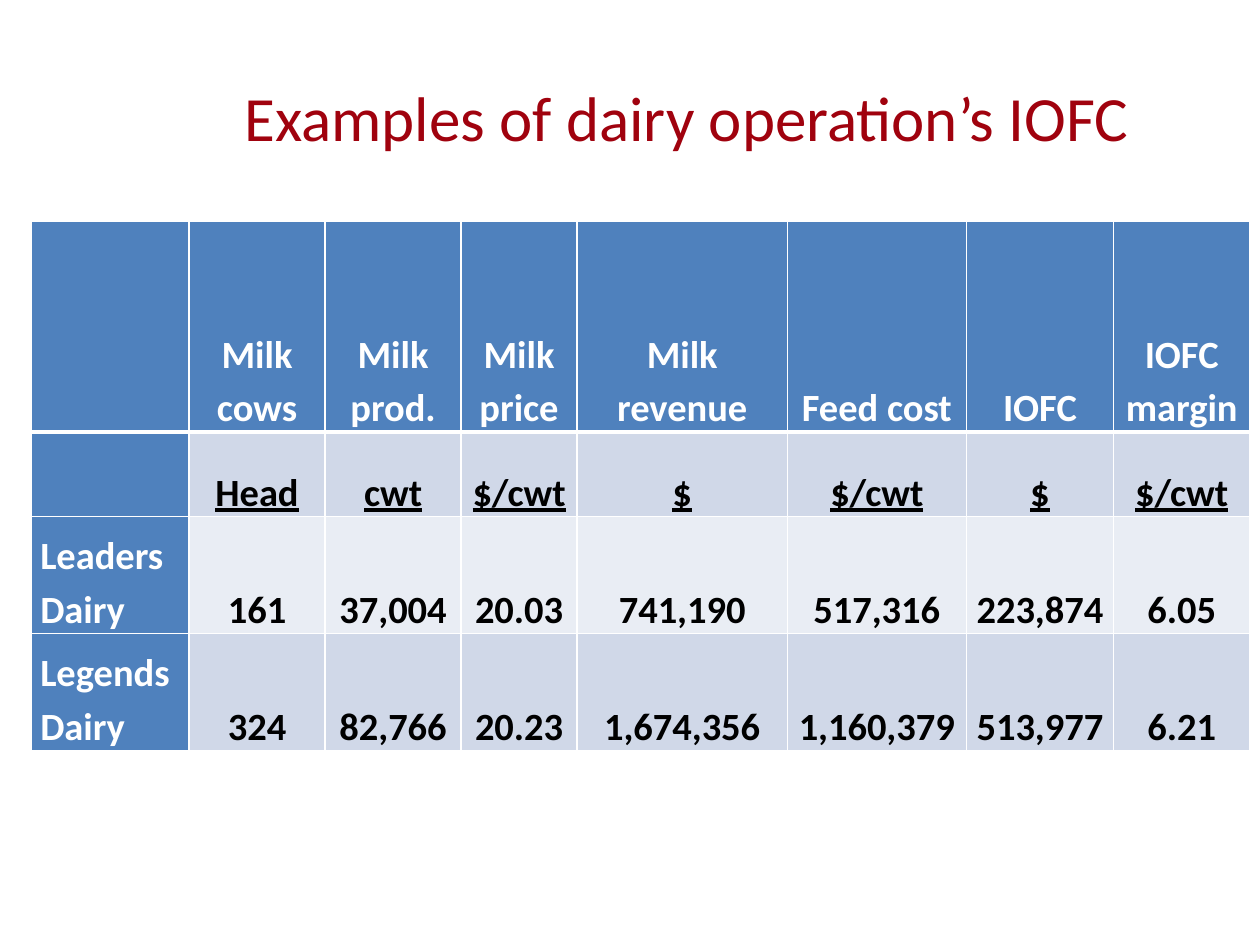
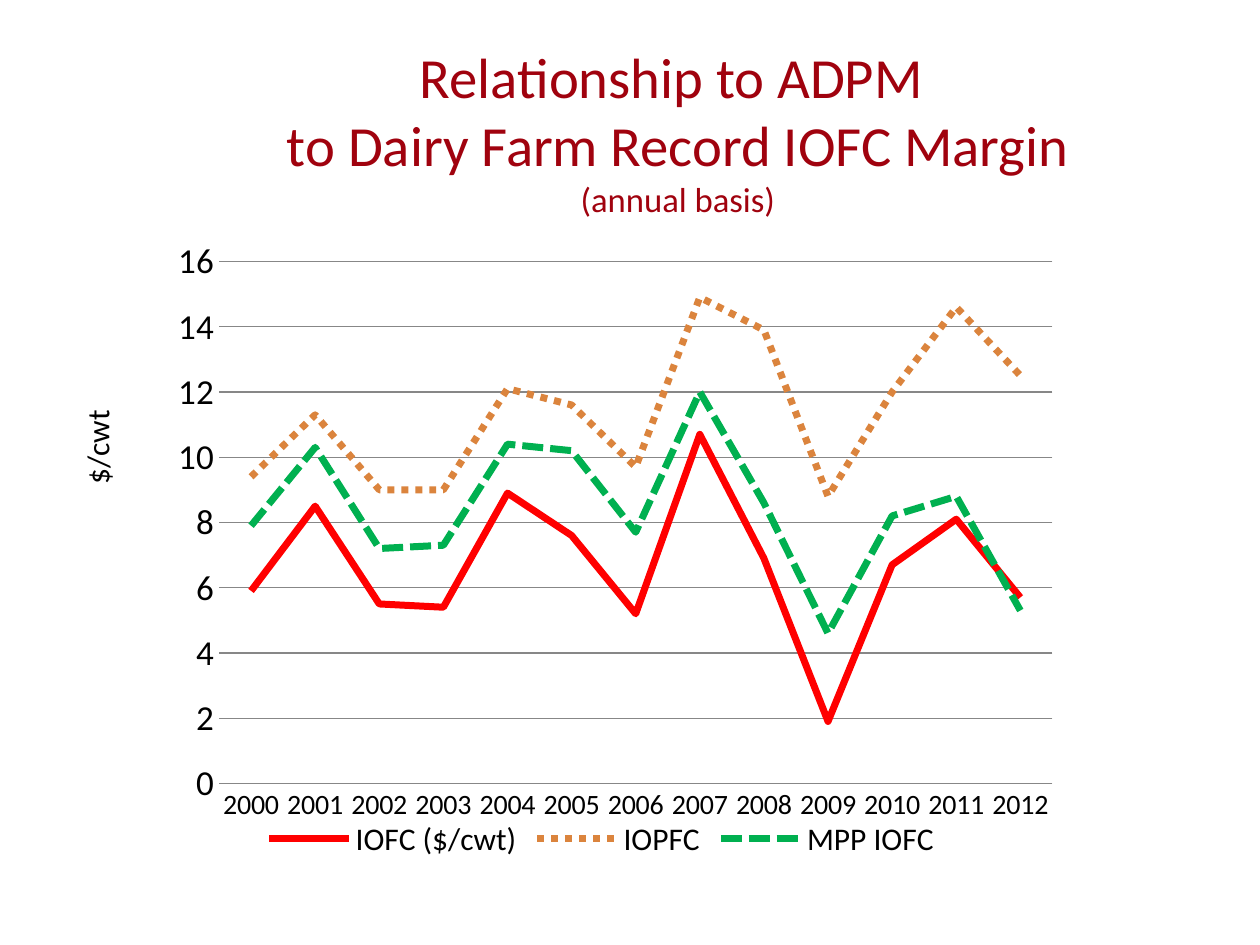
import dataclasses

import lxml.etree
import pptx
import pptx.chart.data
import pptx.dml.color
import pptx.enum.chart
import pptx.enum.dml
import pptx.enum.text
import pptx.oxml
import pptx.oxml.ns
import pptx.util

PX = 9144


@dataclasses.dataclass(frozen=True)
class Theme:
    font: str = "Calibri"
    title: str = "A0020E"
    ink: str = "000000"
    white: str = "FFFFFF"
    header: str = "4F81BD"
    band_dark: str = "D0D8E8"
    band_light: str = "E9EDF4"
    grid: str = "878787"
    iofc: str = "FF0000"
    iopfc: str = "DB843D"
    mpp: str = "00B050"
    table_size: float = 22
    label_size: float = 18
    category_size: float = 16
    value_size: float = 20


theme = Theme()
rgb = pptx.dml.color.RGBColor.from_string


def style_font(font, size, color, bold=False):
    font.name = theme.font
    font.size = pptx.util.Pt(size)
    font.color.rgb = rgb(color)
    font.bold = bold


def add_title(page, left, top, width, height, lines):
    box = page.shapes.add_textbox(left * PX, top * PX, width * PX, height * PX)
    box.text_frame.word_wrap = True
    box.text_frame.vertical_anchor = pptx.enum.text.MSO_ANCHOR.MIDDLE
    para = box.text_frame.paragraphs[0]
    para.alignment = pptx.enum.text.PP_ALIGN.CENTER
    for index, (text, size) in enumerate(lines):
        if index:
            para.add_line_break()
        span = para.add_run()
        span.text = text
        style_font(span.font, size, theme.title)


deck = pptx.Presentation()
deck.slide_width = 1000 * PX
deck.slide_height = 750 * PX
blank = deck.slide_layouts[6]

page = deck.slides.add_slide(blank)
add_title(page, 140, 30, 810, 125, [("Examples of dairy operation’s IOFC", 36)])

column_widths = [125, 108, 108, 92, 167, 142, 117, 108]
row_heights = [167, 67, 93, 93]
dairy_rows = [
    ["", "Milk cows", "Milk prod.", "Milk price", "Milk revenue", "Feed cost", "IOFC", "IOFC margin"],
    ["", "Head", "cwt", "$/cwt", "$", "$/cwt", "$", "$/cwt"],
    ["Leaders Dairy", "161", "37,004", "20.03", "741,190", "517,316", "223,874", "6.05"],
    ["Legends Dairy", "324", "82,766", "20.23", "1,674,356", "1,160,379", "513,977", "6.21"],
]
table = page.shapes.add_table(
    len(row_heights), len(column_widths),
    25 * PX, 176 * PX, sum(column_widths) * PX, sum(row_heights) * PX,
).table
for column, width in zip(table.columns, column_widths):
    column.width = width * PX
for row, height in zip(table.rows, row_heights):
    row.height = height * PX

for row_index, texts in enumerate(dairy_rows):
    for column_index, text in enumerate(texts):
        cell = table.cell(row_index, column_index)
        is_header = row_index == 0 or column_index == 0
        cell.margin_left = cell.margin_right = 7 * PX
        cell.margin_top = cell.margin_bottom = 0
        cell.vertical_anchor = pptx.enum.text.MSO_ANCHOR.BOTTOM

        cell_properties = cell._tc.get_or_add_tcPr()
        for side in "LRTB":
            below_header = (row_index, side) in [(0, "B"), (1, "T")]
            cell_properties.append(pptx.oxml.parse_xml(
                f'<a:ln{side} {pptx.oxml.ns.nsdecls("a")} w="{38100 if below_header else 12700}">'
                f'<a:solidFill><a:srgbClr val="{theme.white}"/></a:solidFill></a:ln{side}>'
            ))
        band = theme.band_dark if row_index % 2 else theme.band_light
        cell.fill.solid()
        cell.fill.fore_color.rgb = rgb(theme.header if is_header else band)

        para = cell.text_frame.paragraphs[0]
        para.line_spacing = 1.15
        if column_index:
            para.alignment = pptx.enum.text.PP_ALIGN.CENTER
        if text:
            span = para.add_run()
            span.text = text
            style_font(span.font, theme.table_size, theme.white if is_header else theme.ink, True)
            if row_index == 1:
                span.font.underline = True

page = deck.slides.add_slide(blank)
add_title(page, 88, 41, 900, 125, [
    ("Relationship to ADPM ", 32.4),
    ("to Dairy Farm Record IOFC Margin", 32.4),
    ("(annual basis)", 19.8),
])

dash = pptx.enum.dml.MSO_LINE
margins = [
    ("IOFC ($/cwt)", theme.iofc, dash.SOLID,
     [5.9, 8.5, 5.5, 5.4, 8.9, 7.6, 5.2, 10.7, 6.9, 1.9, 6.7, 8.1, 5.7]),
    ("IOPFC", theme.iopfc, dash.ROUND_DOT,
     [9.4, 11.3, 9, 9, 12.1, 11.6, 9.7, 14.9, 13.9, 8.8, 12, 14.6, 12.5]),
    ("MPP IOFC", theme.mpp, dash.SQUARE_DOT,
     [7.9, 10.3, 7.2, 7.3, 10.4, 10.2, 7.7, 12, 8.6, 4.6, 8.2, 8.8, 5.3]),
]
chart_data = pptx.chart.data.CategoryChartData()
chart_data.categories = [str(year) for year in range(2000, 2013)]
for name, color, dash_style, values in margins:
    chart_data.add_series(name, values)
chart = page.shapes.add_chart(
    pptx.enum.chart.XL_CHART_TYPE.LINE, 116 * PX, 177 * PX, 723 * PX, 509 * PX, chart_data
).chart
chart.has_title = False
style_font(chart.font, 10, theme.ink)
chart.has_legend = True
chart.legend.position = pptx.enum.chart.XL_LEGEND_POSITION.BOTTOM
chart.legend.include_in_layout = False
style_font(chart.legend.font, theme.label_size, theme.ink)

plot = chart.plots[0]
plot.vary_by_categories = False
for series, (name, color, dash_style, values) in zip(plot.series, margins):
    series.smooth = False
    series.format.line.color.rgb = rgb(color)
    series.format.line.width = pptx.util.Pt(4)
    series.format.line.dash_style = dash_style

value_axis = chart.value_axis
value_axis.minimum_scale = 0
value_axis.maximum_scale = 16
value_axis.major_unit = 2
value_axis.format.line.fill.background()
value_axis.has_major_gridlines = True
for line in (value_axis.major_gridlines.format.line, chart.category_axis.format.line):
    line.color.rgb = rgb(theme.grid)
    line.width = pptx.util.Pt(0.75)
for axis, size in ((value_axis, theme.value_size), (chart.category_axis, theme.category_size)):
    axis.major_tick_mark = pptx.enum.chart.XL_TICK_MARK.NONE
    axis.minor_tick_mark = pptx.enum.chart.XL_TICK_MARK.NONE
    style_font(axis.tick_labels.font, size, theme.ink)

plot_area = chart._chartSpace.chart.plotArea
for layout in plot_area.findall(pptx.oxml.ns.qn("c:layout")):
    plot_area.remove(layout)
layout = lxml.etree.Element(pptx.oxml.ns.qn("c:layout"))
manual = lxml.etree.SubElement(layout, pptx.oxml.ns.qn("c:manualLayout"))
for tag, value in (("layoutTarget", "inner"), ("xMode", "edge"), ("yMode", "edge"),
                   ("x", "0.08"), ("y", "0.06"), ("w", "0.915"), ("h", "0.814")):
    lxml.etree.SubElement(manual, pptx.oxml.ns.qn(f"c:{tag}")).set("val", value)
plot_area.insert(0, layout)

axis_label = page.shapes.add_textbox(37 * PX, 334 * PX, 80 * PX, 40 * PX)
axis_label.rotation = 270
axis_label.text_frame.word_wrap = False
axis_label.text_frame.auto_size = pptx.enum.text.MSO_AUTO_SIZE.SHAPE_TO_FIT_TEXT
span = axis_label.text_frame.paragraphs[0].add_run()
span.text = "$/cwt"
style_font(span.font, theme.label_size, theme.ink)

deck.save("out.pptx")
